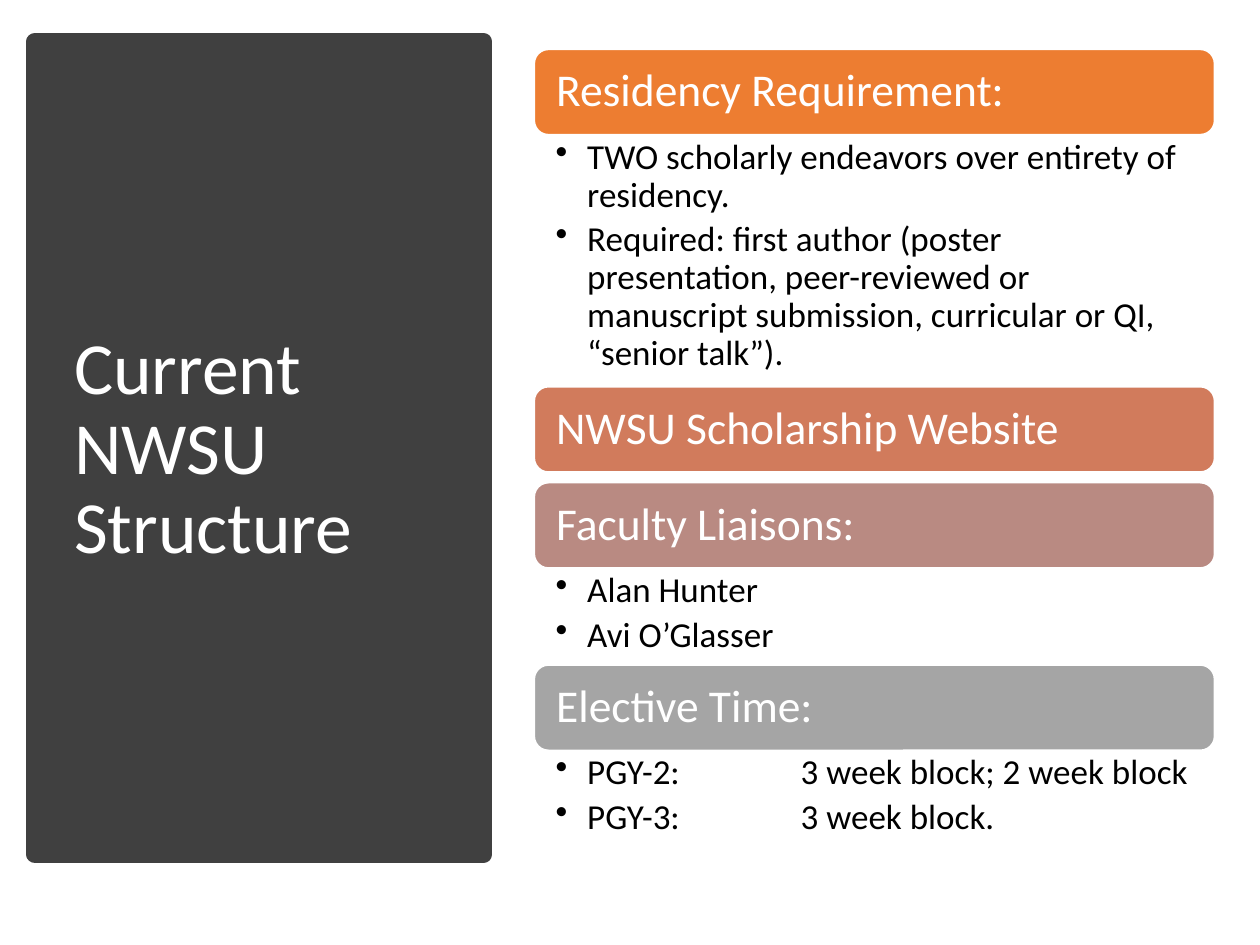
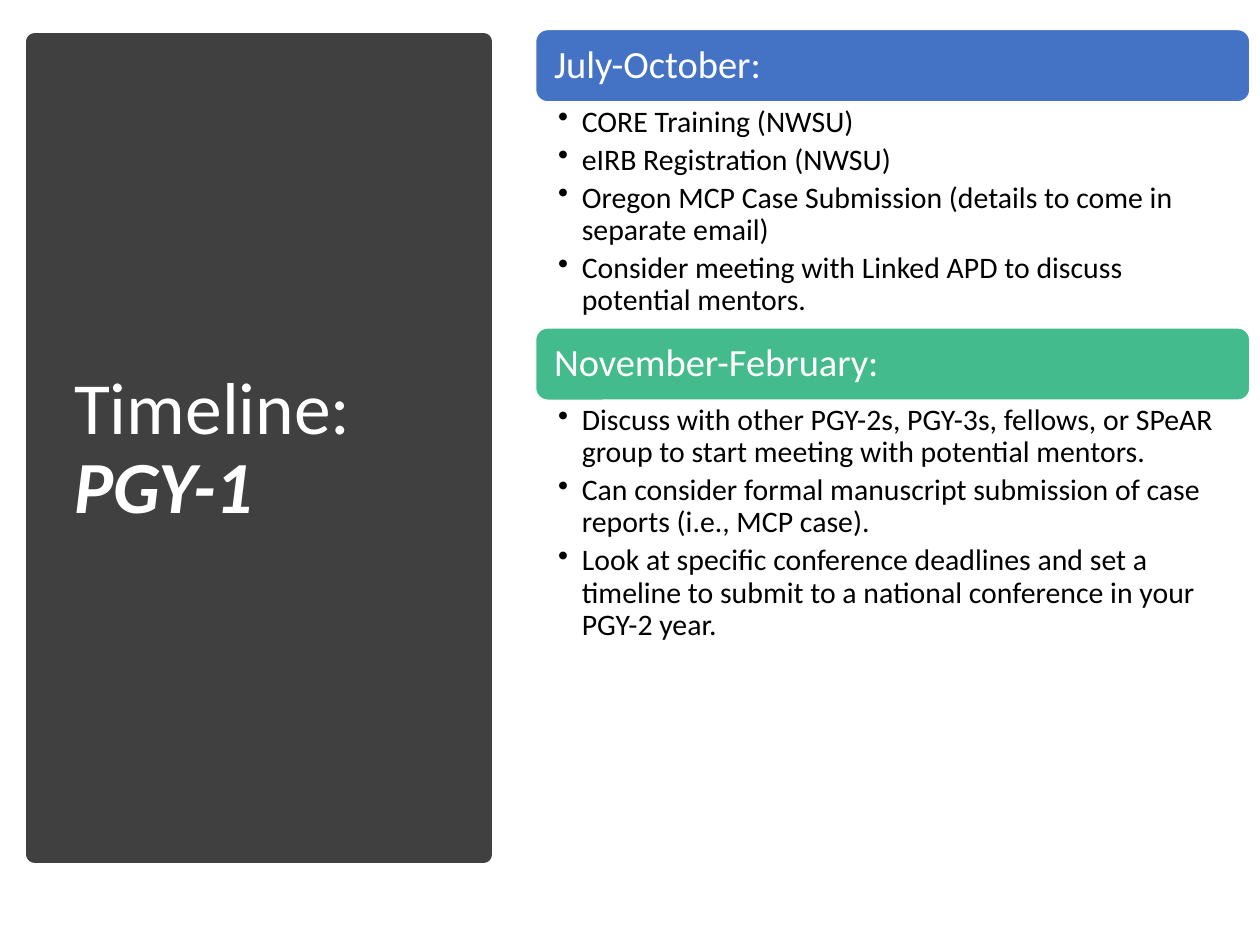
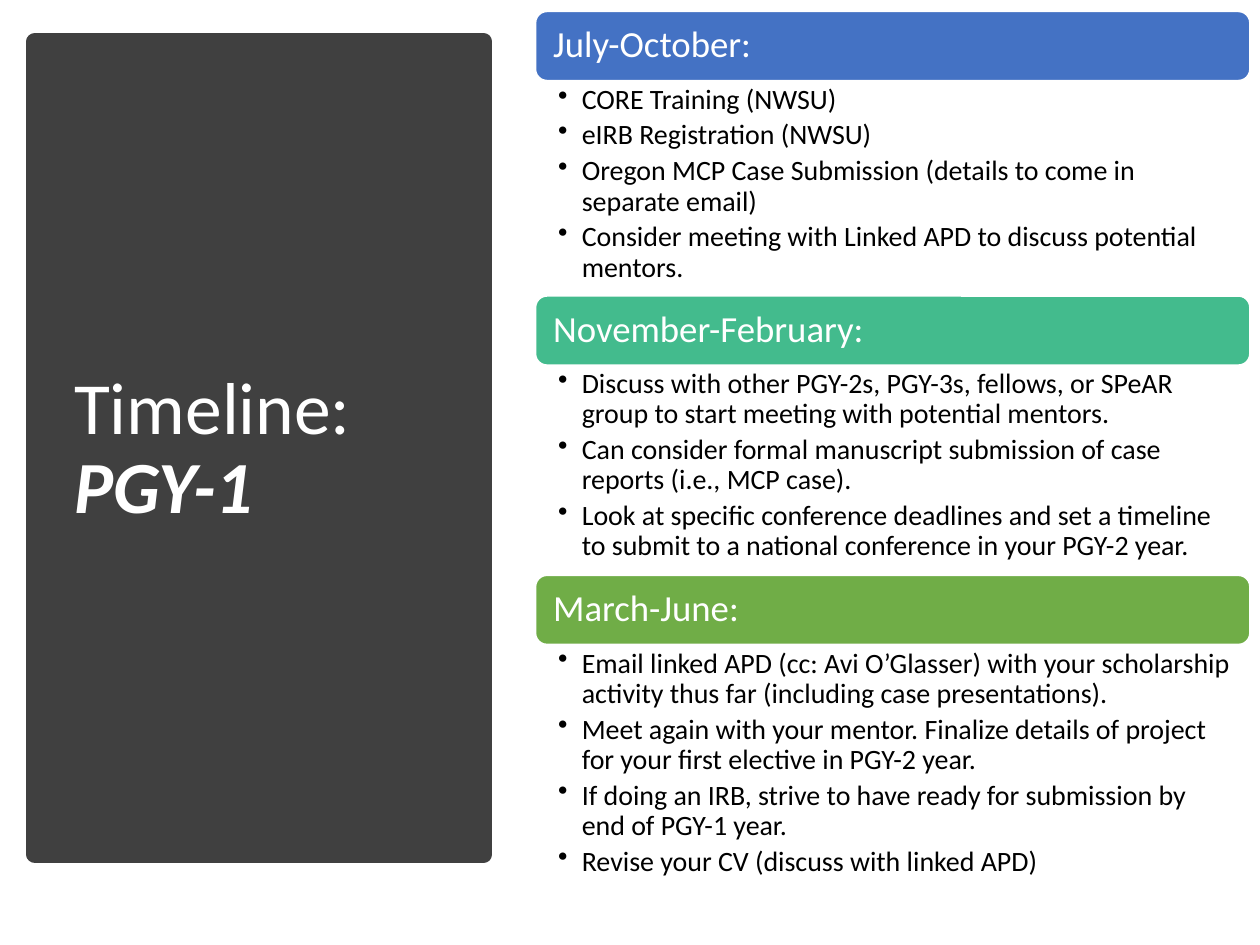
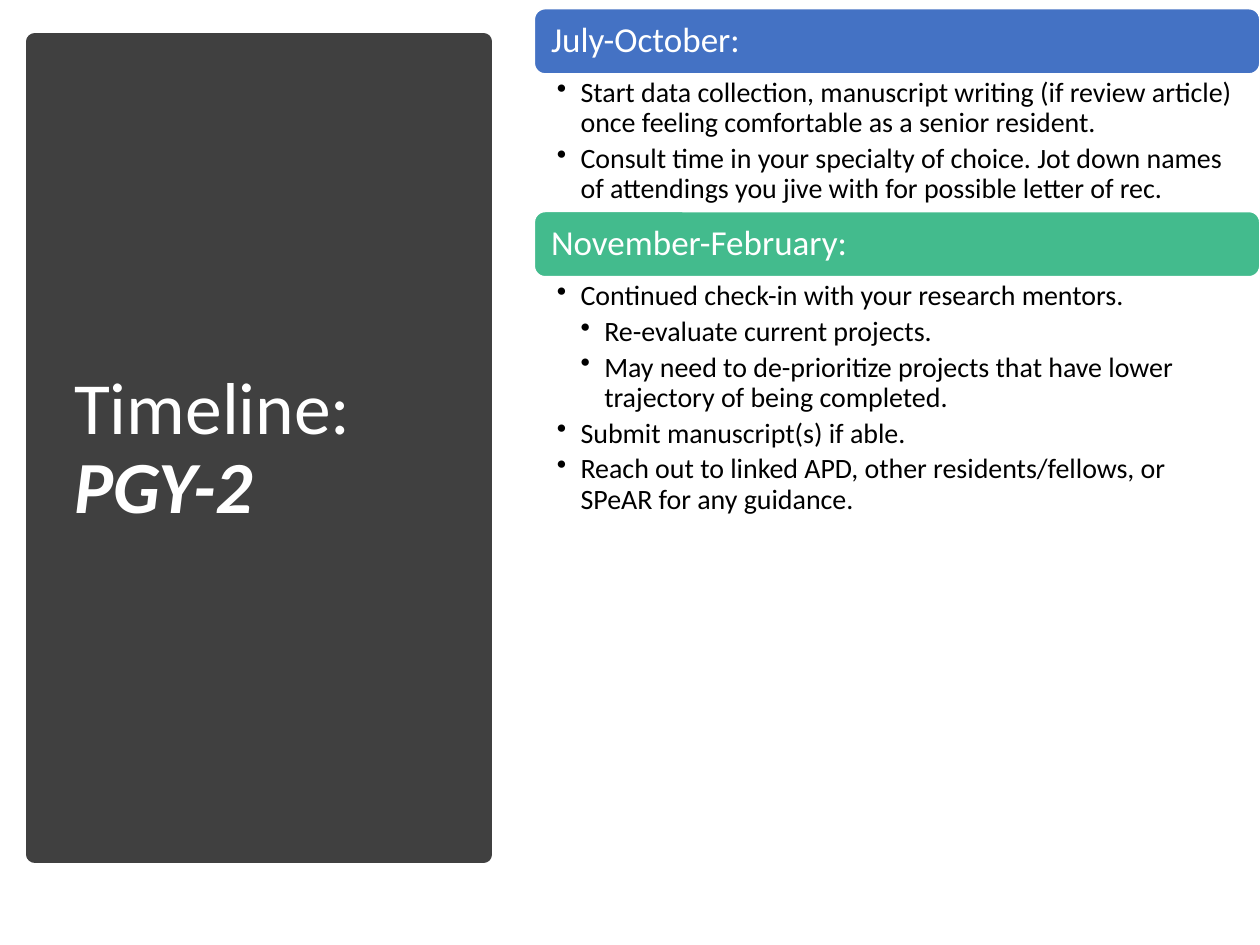
from collections import namedtuple
from dataclasses import dataclass

from lxml.etree import SubElement
from pptx import Presentation
from pptx.dml.color import RGBColor as RGB
from pptx.enum.shapes import MSO_SHAPE as SHAPE
from pptx.enum.text import MSO_ANCHOR as ANCHOR, PP_ALIGN as ALIGN
from pptx.oxml.ns import qn
from pptx.util import Pt


@dataclass(frozen=True)
class Theme:
    font: str = "Calibri"
    panel: str = "404040"
    white: str = "FFFFFF"
    black: str = "000000"
    orange: str = "ED7D31"
    terracotta: str = "D17B5C"
    rose: str = "B98A82"
    grey: str = "A5A5A5"
    blue: str = "4472C4"
    teal: str = "43BB8D"
    green: str = "70AD47"
    title_size: float = 42
    line_spacing: float = 0.9
    bar_inset: float = 0.39
    bullet_gap: float = 0.2


Section = namedtuple("Section", "heading color bullets")
Column = namedtuple(
    "Column",
    "left top width bar_height gap heading_size bullet_size indent inset_left inset_right",
)


class Deck:
    def __init__(self, theme):
        self.theme = theme
        self.presentation = Presentation()
        self.presentation.slide_width = Pt(720)
        self.presentation.slide_height = Pt(540)
        self.slide = None

    def add_slide(self, *title_runs):
        layout = self.presentation.slide_layouts[6]
        self.slide = self.presentation.slides.add_slide(layout)
        self.block(SHAPE.RECTANGLE, (20, 23.8, 256.3, 464.4), self.theme.panel, self.theme.panel, 10)
        self.title(title_runs)

    def block(self, kind, box, fill, outline, outline_width):
        block = self.slide.shapes.add_shape(kind, *map(Pt, box))
        block.shadow.inherit = False
        block.fill.solid()
        block.fill.fore_color.rgb = RGB.from_string(fill)
        block.line.color.rgb = RGB.from_string(outline)
        block.line.width = Pt(outline_width)
        return block

    def frame(self, holder, anchor, left, top, right, bottom):
        frame = holder.text_frame
        settings = {
            "word_wrap": True,
            "vertical_anchor": anchor,
            "margin_left": Pt(left),
            "margin_top": Pt(top),
            "margin_right": Pt(right),
            "margin_bottom": Pt(bottom),
        }
        for key, value in settings.items():
            setattr(frame, key, value)
        return frame

    def add_words(self, paragraph, text, size, color, **emphasis):
        paragraph.alignment = ALIGN.LEFT
        paragraph.line_spacing = self.theme.line_spacing
        run = paragraph.add_run()
        run.text = text
        run.font.color.rgb = RGB.from_string(color)
        for key, value in {"name": self.theme.font, "size": Pt(size), **emphasis}.items():
            setattr(run.font, key, value)

    def title(self, runs):
        holder = self.slide.shapes.add_textbox(Pt(35.3), Pt(50.4), Pt(224.6), Pt(414))
        paragraph = self.frame(holder, ANCHOR.MIDDLE, 7.2, 3.6, 7.2, 3.6).paragraphs[0]
        for text, strong in runs:
            emphasis = {"bold": True, "italic": True} if strong else {}
            self.add_words(paragraph, text, self.theme.title_size, self.theme.white, **emphasis)

    def heading_bar(self, column, top, section):
        box = (column.left, top, column.width, column.bar_height)
        bar = self.block(SHAPE.ROUNDED_RECTANGLE, box, section.color, self.theme.white, 1)
        inset = column.heading_size * self.theme.bar_inset
        frame = self.frame(bar, ANCHOR.MIDDLE, inset, 0, inset, 0)
        self.add_words(frame.paragraphs[0], section.heading, column.heading_size, self.theme.white)

    def bullet_list(self, column, top, height, bullets):
        holder = self.slide.shapes.add_textbox(*map(Pt, (column.left, top, column.width, height)))
        frame = self.frame(holder, ANCHOR.TOP, column.inset_left, 2.5, column.inset_right, 2.5)
        for index, bullet in enumerate(bullets):
            level, text = bullet if isinstance(bullet, tuple) else (1, bullet)
            paragraph = frame.paragraphs[0] if index == 0 else frame.add_paragraph()
            self.add_words(paragraph, text, column.bullet_size, self.theme.black)
            paragraph.level = level
            paragraph.space_after = Pt(column.bullet_size * self.theme.bullet_gap)
            self.bullet_mark(paragraph, column.indent, level, "\t" in text)

    def bullet_mark(self, paragraph, indent, level, tabbed):
        properties = paragraph._p.get_or_add_pPr()
        properties.set("marL", str(Pt(indent * level)))
        properties.set("indent", str(-Pt(indent)))
        SubElement(properties, qn("a:buChar"), char="•")
        if tabbed:
            tabs = SubElement(properties, qn("a:tabLst"))
            SubElement(tabs, qn("a:tab"), pos=str(Pt(140)), algn="l")

    def sections(self, column, sections, list_heights):
        top = column.top
        for section, height in zip(sections, list_heights):
            self.heading_bar(column, top, section)
            top += column.bar_height
            if section.bullets:
                self.bullet_list(column, top, height, section.bullets)
            top += height or column.gap


def main():
    theme = Theme()
    deck = Deck(theme)

    structure = [
        Section("Residency Requirement:", theme.orange, [
            "TWO scholarly endeavors over entirety of residency.",
            "Required: first author (poster presentation, peer-reviewed or manuscript "
            "submission, curricular or QI, “senior talk”).",
        ]),
        Section("NWSU Scholarship Website", theme.terracotta, []),
        Section("Faculty Liaisons:", theme.rose, ["Alan Hunter", "Avi O’Glasser"]),
        Section("Elective Time:", theme.grey, [
            "PGY-2: \t3 week block; 2 week block",
            "PGY-3: \t3 week block.",
        ]),
    ]
    first_year = [
        Section("July-October:", theme.blue, [
            "CORE Training (NWSU)",
            "eIRB Registration (NWSU)",
            "Oregon MCP Case Submission (details to come in separate email)",
            "Consider meeting with Linked APD to discuss potential mentors.",
        ]),
        Section("November-February:", theme.teal, [
            "Discuss with other PGY-2s, PGY-3s, fellows, or SPeAR group to start meeting "
            "with potential mentors.",
            "Can consider formal manuscript submission of case reports (i.e., MCP case).",
            "Look at specific conference deadlines and set a timeline to submit to a "
            "national conference in your PGY-2 year.",
        ]),
        Section("March-June:", theme.green, [
            "Email linked APD (cc: Avi O’Glasser) with your scholarship activity thus far "
            "(including case presentations).",
            "Meet again with your mentor. Finalize details of project for your first "
            "elective in PGY-2 year.",
            "If doing an IRB, strive to have ready for submission by end of PGY-1 year.",
            "Revise your CV (discuss with linked APD)",
        ]),
    ]
    second_year = [
        Section("July-October:", theme.blue, [
            "Start data collection, manuscript writing (if review article) once feeling "
            "comfortable as a senior resident.",
            "Consult time in your specialty of choice. Jot down names of attendings you "
            "jive with for possible letter of rec.",
        ]),
        Section("November-February:", theme.teal, [
            "Continued check-in with your research mentors.",
            (2, "Re-evaluate current projects."),
            (2, "May need to de-prioritize projects that have lower trajectory of being completed."),
            "Submit manuscript(s) if able.",
            "Reach out to linked APD, other residents/fellows, or SPeAR for any guidance.",
        ]),
    ]

    structure_column = Column(305.3, 28.2, 388.8, 48.8, 6, 26, 20, 18, 12.3, 14.2)
    opening_column = Column(306, 16.8, 408.3, 41.5, 0, 22, 17, 13.5, 13, 12)
    full_column = Column(306, 6.5, 408.3, 39.6, 0, 21, 16, 13.5, 13, 11.4)
    second_column = Column(305.3, 4.9, 414.7, 37.4, 0, 20, 16, 13.5, 13, 11.4)

    pages = [
        ([("Current NWSU Structure", False)], structure_column, structure, [144, 0, 55.4, 55.4]),
        ([("Timeline: ", False), ("PGY-1", True)], opening_column, first_year[:2], [129, 143]),
        ([("Timeline: ", False), ("PGY-1", True)], full_column, first_year, [123, 120, 157.7]),
        ([("Timeline: ", False), ("PGY-2", True)], second_column, second_year, [78.5, 143]),
    ]
    for title_runs, column, sections, list_heights in pages:
        deck.add_slide(*title_runs)
        deck.sections(column, sections, list_heights)
    deck.presentation.save("out.pptx")


if __name__ == "__main__":
    main()
